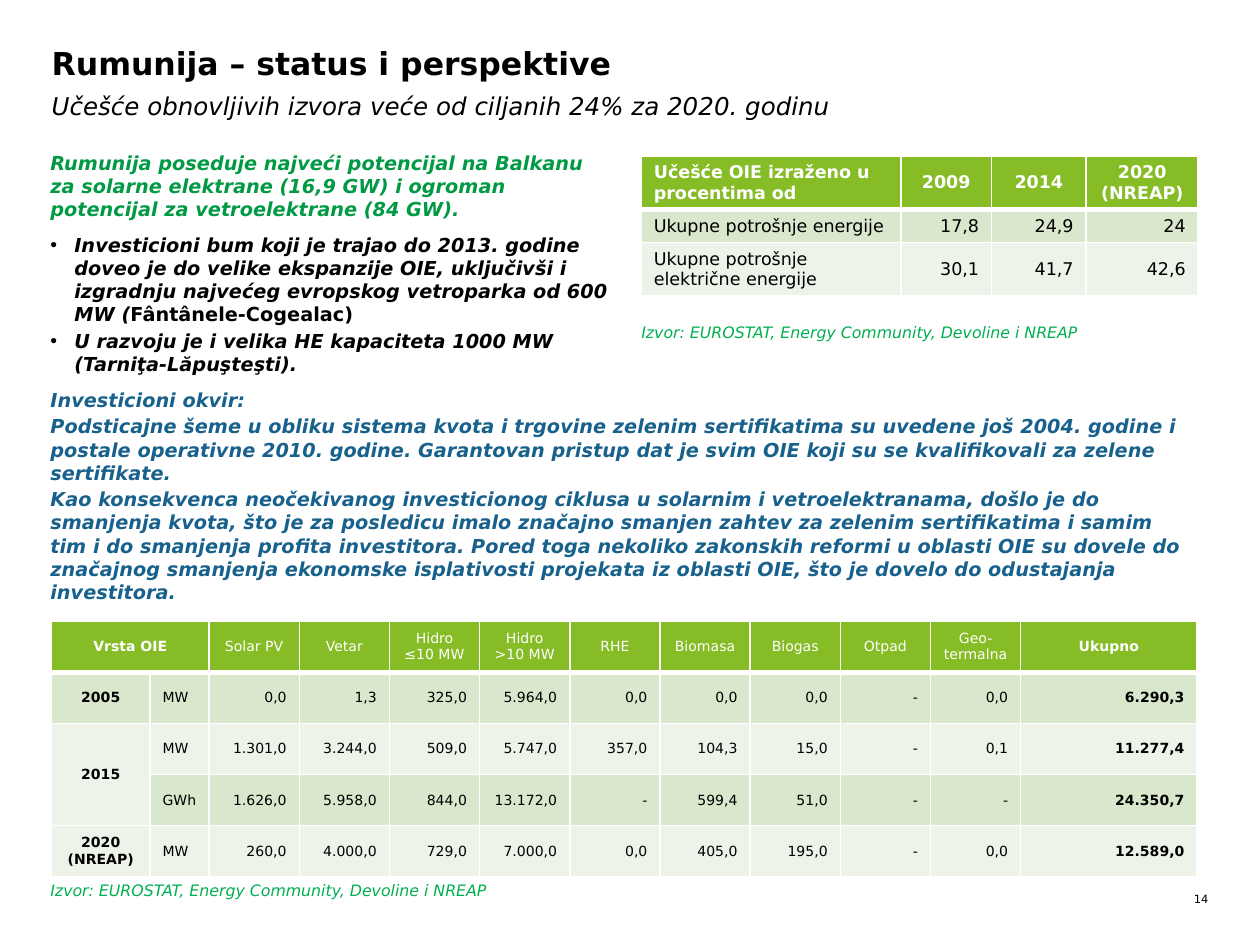
from dataclasses import dataclass
from typing import Callable, Optional

import pptx
import pptx.dml.color
import pptx.enum.text
import pptx.oxml
import pptx.oxml.ns
import pptx.util
from lxml import etree

FONT = "DejaVu Sans"
W, H = pptx.util.Inches(10), pptx.util.Inches(7.5)
COLORS = {
    "black": "000000", "white": "FFFFFF", "header": "86BC25",
    "band": "D9E7CD", "pale": "EDF3E8", "source": "00B050",
    "intro": "009A44", "frame": "17618C",
}
ALIGN = {
    "l": pptx.enum.text.PP_ALIGN.LEFT,
    "c": pptx.enum.text.PP_ALIGN.CENTER,
    "r": pptx.enum.text.PP_ALIGN.RIGHT,
}


@dataclass
class Box:
    """Position and size in percent of the slide's width and height."""
    x: float
    y: float
    w: float
    h: float

    def emu(self) -> tuple[int, int, int, int]:
        return (int(W * self.x / 100), int(H * self.y / 100),
                int(W * self.w / 100), int(H * self.h / 100))


@dataclass
class Style:
    size: float
    color: str = "black"
    bold: bool = False
    italic: bool = False


@dataclass
class Run:
    text: str
    italic: Optional[bool] = None


@dataclass
class Grid:
    box: Box
    cols: list[float]
    rows: list[float]
    data: list[list[str]]
    size: float
    head_align: str
    body_align: str
    is_bold: Callable[[int, int], bool]


def rgb(name: str) -> pptx.dml.color.RGBColor:
    return pptx.dml.color.RGBColor.from_string(COLORS[name])


def add_run(p, run: Run, style: Style) -> None:
    r = p.add_run()
    r.text = run.text
    r.font.name = FONT
    r.font.size = pptx.util.Pt(style.size)
    r.font.bold = style.bold
    r.font.italic = style.italic if run.italic is None else run.italic
    r.font.color.rgb = rgb(style.color)


def add_bullet(p) -> None:
    pPr = p._p.get_or_add_pPr()
    indent = pptx.util.Inches(0.19)
    pPr.set("marL", str(indent))
    pPr.set("indent", str(-indent))
    etree.SubElement(pPr, pptx.oxml.ns.qn("a:buChar")).set("char", "•")


def write(sp, box: Box, paragraphs: list[list[Run]], style: Style,
          align: str = "l", bullets: bool = False) -> None:
    """Place a shape and fill it with paragraphs of runs."""
    sp.left, sp.top, sp.width, sp.height = box.emu()
    tf = sp.text_frame
    tf.word_wrap = True
    tf.auto_size = pptx.enum.text.MSO_AUTO_SIZE.NONE
    tf.vertical_anchor = pptx.enum.text.MSO_ANCHOR.TOP
    tf.margin_left = tf.margin_top = tf.margin_right = tf.margin_bottom = 0
    for i, runs in enumerate(paragraphs):
        p = tf.add_paragraph() if i else tf.paragraphs[0]
        p.alignment = ALIGN[align]
        p.space_before = pptx.util.Pt(2 if i else 0)
        if bullets:
            add_bullet(p)
        for run in runs:
            add_run(p, run, style)


def add_text(s, box: Box, texts: list[str], style: Style, align: str = "l") -> None:
    write(s.shapes.add_textbox(*box.emu()), box, [[Run(t)] for t in texts], style, align)


def add_borders(cell, top: float, bottom: float) -> None:
    tcPr = cell._tc.get_or_add_tcPr()
    for side, width in (("L", 1), ("R", 1), ("T", top), ("B", bottom)):
        tcPr.append(pptx.oxml.parse_xml(
            f'<a:ln{side} {pptx.oxml.ns.nsdecls("a")} w="{pptx.util.Pt(width)}">'
            f'<a:solidFill><a:srgbClr val="{COLORS["white"]}"/></a:solidFill></a:ln{side}>'))


def add_grid(s, g: Grid):
    table = s.shapes.add_table(len(g.rows), len(g.cols), *g.box.emu()).table
    table.horz_banding = False
    for col, share in zip(table.columns, g.cols):
        col.width = int(W * share / 100)
    for row, share in zip(table.rows, g.rows):
        row.height = int(H * share / 100)
    for i, texts in enumerate(g.data):
        aligns = g.body_align if i else g.head_align
        for j, text in enumerate(texts):
            cell = table.cell(i, j)
            add_borders(cell, 3 if i == 1 else 1, 1 if i else 3)
            cell.fill.solid()
            cell.fill.fore_color.rgb = rgb(("pale", "band")[i % 2] if i else "header")
            cell.vertical_anchor = pptx.enum.text.MSO_ANCHOR.MIDDLE
            style = Style(g.size, "black" if i else "white", g.is_bold(i, j))
            for k, line in enumerate(text.split("\n") if text else []):
                tf = cell.text_frame
                p = tf.add_paragraph() if k else tf.paragraphs[0]
                p.alignment = ALIGN[aligns[j]]
                add_run(p, Run(line), style)
    return table


SHARES = Grid(
    Box(50.9, 16.53, 44.2, 13.47), [20.6, 7.2, 7.5, 8.9], [5.47, 3.47, 4.53],
    [["Učešće OIE izraženo u procentima od", "2009", "2014", "2020 (NREAP)"],
     ["Ukupne potrošnje energije", "17,8", "24,9", "24"],
     ["Ukupne potrošnje električne energije", "30,1", "41,7", "42,6"]],
    10, "lccc", "lrrr", lambda i, j: i == 0)

CAPACITY = Grid(
    Box(4.1, 65.73, 90.8, 27.07), [7.8, 4.7] + [7.16] * 9 + [14], [27.07 / 5] * 5,
    [["Vrsta OIE", "", "Solar PV", "Vetar", "Hidro\n≤10 MW", "Hidro\n>10 MW", "RHE",
      "Biomasa", "Biogas", "Otpad", "Geo-termalna", "Ukupno"],
     ["2005", "MW", "0,0", "1,3", "325,0", "5.964,0", "0,0", "0,0", "0,0", "-", "0,0",
      "6.290,3"],
     ["2015", "MW", "1.301,0", "3.244,0", "509,0", "5.747,0", "357,0", "104,3", "15,0",
      "-", "0,1", "11.277,4"],
     ["", "GWh", "1.626,0", "5.958,0", "844,0", "13.172,0", "-", "599,4", "51,0", "-",
      "-", "24.350,7"],
     ["2020\n(NREAP)", "MW", "260,0", "4.000,0", "729,0", "7.000,0", "0,0", "405,0",
      "195,0", "-", "0,0", "12.589,0"]],
    8, "c" * 12, "cl" + "r" * 10, lambda i, j: j in (0, 11))

BULLETS = [
    [Run("Investicioni bum koji je trajao do 2013. godine doveo je do velike ekspanzije "
         "OIE, uključivši i izgradnju najvećeg evropskog vetroparka od 600 MW ("),
     Run("Fântânele-Cogealac)", italic=False)],
    [Run("U razvoju je i velika HE kapaciteta 1000 MW (Tarniţa-Lăpuşteşti).")],
]
FRAMEWORK = [
    "Investicioni okvir:",
    "Podsticajne šeme u obliku sistema kvota i trgovine zelenim sertifikatima su uvedene "
    "još 2004. godine i postale operativne 2010. godine. Garantovan pristup dat je svim "
    "OIE koji su se kvalifikovali za zelene sertifikate.",
    "Kao konsekvenca neočekivanog investicionog ciklusa u solarnim i vetroelektranama, "
    "došlo je do smanjenja kvota, što je za posledicu imalo značajno smanjen zahtev za "
    "zelenim sertifikatima i samim tim i do smanjenja profita investitora. Pored toga "
    "nekoliko zakonskih reformi u oblasti OIE su dovele do značajnog smanjenja ekonomske "
    "isplativosti projekata iz oblasti OIE, što je dovelo do odustajanja investitora.",
]
INTRO = ("Rumunija poseduje najveći potencijal na Balkanu za solarne elektrane (16,9 GW) "
         "i ogroman potencijal za vetroelektrane (84 GW).")
SOURCE = "Izvor: EUROSTAT, Energy Community, Devoline i NREAP"


def main() -> None:
    prs = pptx.Presentation()
    prs.slide_width, prs.slide_height = W, H
    s = prs.slides.add_slide(prs.slide_layouts[1])
    write(s.shapes.title, Box(4.1, 4.67, 91.1, 5.33),
          [[Run("Rumunija – status i perspektive")]], Style(18, bold=True))
    write(s.placeholders[1], Box(4, 24.67, 44.5, 15.2), BULLETS,
          Style(11, bold=True, italic=True), bullets=True)
    add_text(s, Box(4.1, 9.6, 70, 3.2),
             ["Učešće obnovljivih izvora veće od ciljanih 24% za 2020. godinu"],
             Style(14, italic=True))
    add_text(s, Box(4, 16, 44.5, 7.47), [INTRO], Style(11, "intro", True, True))
    add_text(s, Box(4, 41.07, 90.8, 22.93), FRAMEWORK, Style(11, "frame", True, True))
    add_grid(s, SHARES)
    capacity = add_grid(s, CAPACITY)
    capacity.cell(0, 0).merge(capacity.cell(0, 1))
    capacity.cell(2, 0).merge(capacity.cell(3, 0))
    for x, y in ((50.9, 34.13), (4, 93.2)):
        add_text(s, Box(x, y, 36.7, 2), [SOURCE], Style(9, "source", italic=True))
    add_text(s, Box(93.4, 94.4, 2.5, 1.47), ["14"], Style(6.5), "r")
    prs.save("out.pptx")


if __name__ == "__main__":
    main()
